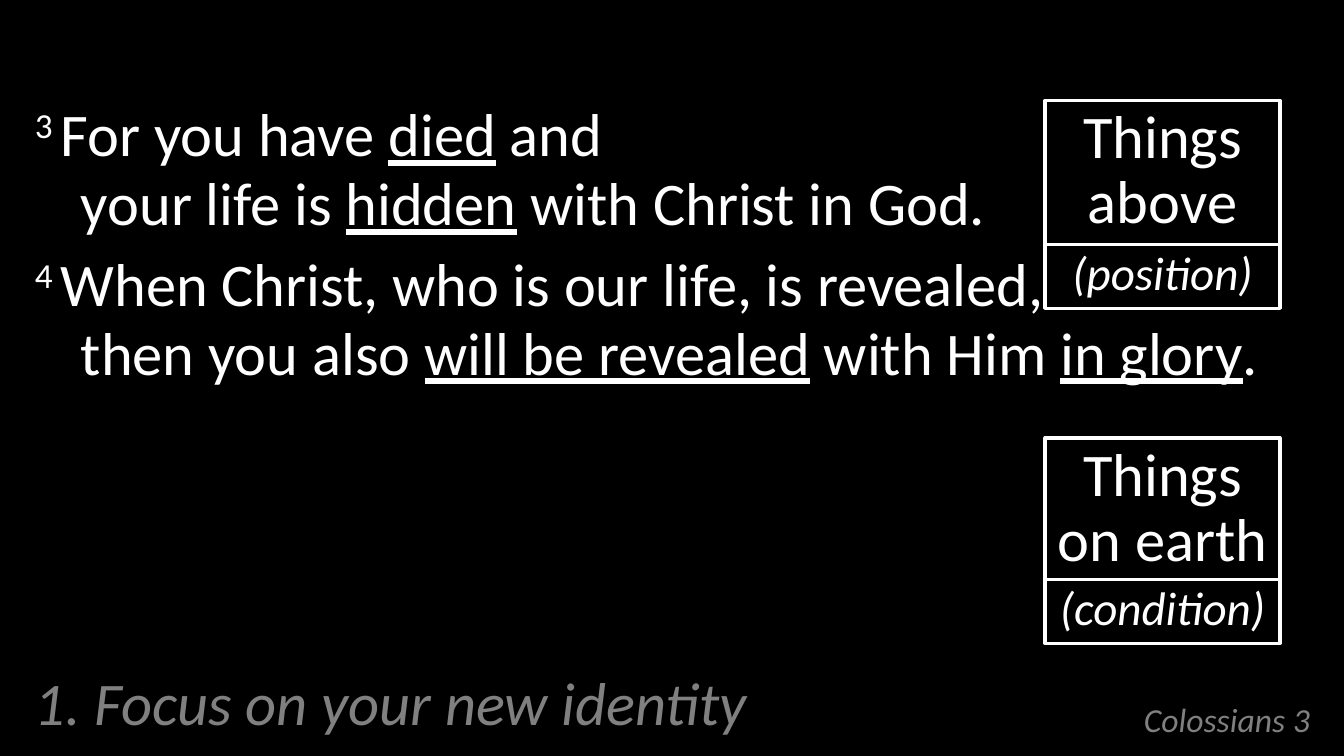
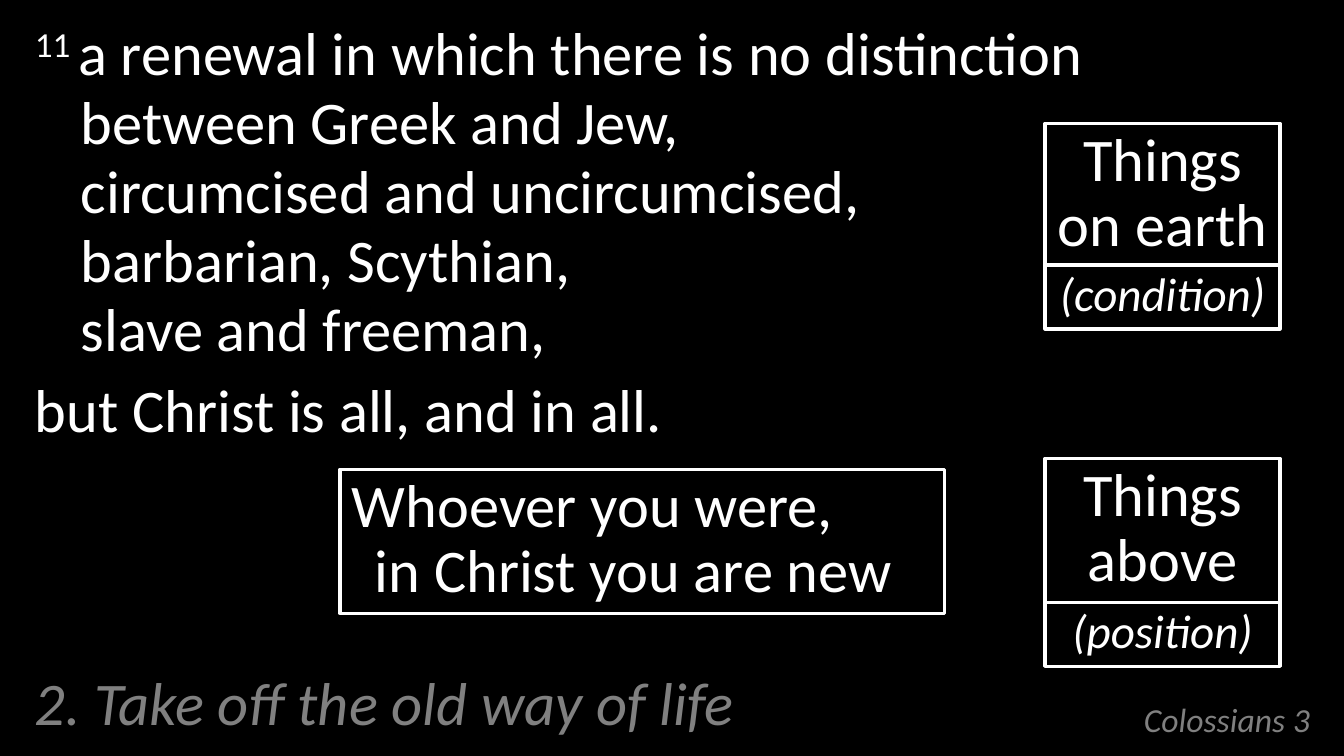
from pptx import Presentation
from pptx.dml.color import RGBColor
from pptx.enum.shapes import MSO_SHAPE
from pptx.enum.text import MSO_ANCHOR, MSO_AUTO_SIZE, PP_ALIGN
from pptx.util import Inches, Pt

RECTANGLE = MSO_SHAPE.RECTANGLE
TOP, BOTTOM = MSO_ANCHOR.TOP, MSO_ANCHOR.BOTTOM
LEFT, CENTER, RIGHT = PP_ALIGN.LEFT, PP_ALIGN.CENTER, PP_ALIGN.RIGHT
FIXED, GROW = MSO_AUTO_SIZE.NONE, MSO_AUTO_SIZE.SHAPE_TO_FIT_TEXT

FONT = "Calibri"
BLACK, WHITE, GREY = "000000", "FFFFFF", "808080"
TITLE_BOX = (7.06, 5.56, 3.87, 0.6)
POINT_BOX = (0.19, 5.56, 8.12, 0.6)
VERSE_LEFT, VERSE_WIDTH, VERSE_BOTTOM = 0.19, 10.7, 5.41
REALM_LEFT, REALM_WIDTH = 8.64, 1.94
NAME_HEIGHT, NOTE_HEIGHT = 1.19, 0.53
ABOVE = ("Things above", "(position)", 1.19)
EARTH = ("Things on earth", "(condition)", 1.17)
PLAIN, NUMBER, UNDERLINE = "plain", "number", "underline"

SLIDES = [
    {
        "point": "1. Focus on your new identity",
        "verse_top": 0.79,
        "verses": [
            [("3 ", NUMBER), ("For you have ", PLAIN), ("died", UNDERLINE),
             (" and \nyour life is ", PLAIN), ("hidden", UNDERLINE),
             (" with Christ in God.", PLAIN)],
            [("4 ", NUMBER),
             ("When Christ, who is our life, is revealed, \nthen you also ", PLAIN),
             ("will be revealed", UNDERLINE), (" with Him ", PLAIN),
             ("in glory", UNDERLINE), (".", PLAIN)],
        ],
        "realms": [(ABOVE, 0.83), (EARTH, 3.62)],
    },
    {
        "point": "2. Take off the old way of life",
        "verse_top": 0.12,
        "verses": [
            [("11 ", NUMBER),
             ("a renewal in which there is no distinction between Greek and Jew, \n"
              "circumcised and uncircumcised, \nbarbarian, Scythian, \n"
              "slave and freeman,", PLAIN)],
            [("but Christ is all, and in all.", PLAIN)],
        ],
        "summary": ("Whoever you were, \nin Christ you are new", (2.81, 3.88, 5, 1.19)),
        "realms": [(EARTH, 1.02), (ABOVE, 3.79)],
    },
]


def colour(value):
    """Turn a hex string into a colour."""
    return RGBColor.from_string(value)


def inches(box):
    """Turn a box of numbers into lengths."""
    return [Inches(length) for length in box]


def prepare_frame(shape, anchor=TOP, auto_size=FIXED):
    """Set the wrapping and anchoring of a shape's text."""
    frame = shape.text_frame
    frame.word_wrap = True
    frame.auto_size = auto_size
    frame.vertical_anchor = anchor
    return frame


def add_span(para, text, style=PLAIN):
    """Add a styled span, breaking lines at each newline."""
    for index, line in enumerate(text.split("\n")):
        if index:
            para.add_line_break()
        span = para.add_run()
        span.text = line
        if style == NUMBER:
            span._r.get_or_add_rPr().set("baseline", "30000")
        elif style == UNDERLINE:
            span.font.underline = True


def format_para(para, size=36, ink=WHITE, italic=False, align=LEFT, spacing=0.95, hang=0):
    """Format a paragraph, with an optional hanging indent."""
    if hang:
        properties = para._p.get_or_add_pPr()
        properties.set("marL", str(Inches(hang)))
        properties.set("indent", str(-Inches(hang)))
    para.alignment = align
    para.line_spacing = spacing
    para.font.name = FONT
    para.font.size = Pt(size)
    para.font.italic = italic
    para.font.color.rgb = colour(ink)


def place_title(page, box):
    """Place the passage reference as the title."""
    title = page.shapes.title
    title.left, title.top, title.width, title.height = inches(box)
    para = prepare_frame(title, BOTTOM).paragraphs[0]
    add_span(para, "Colossians 3")
    format_para(para, 20, GREY, True, RIGHT, 0.8)


def add_point(page, box, text):
    """Add the sermon point at the foot of the page."""
    shape = page.shapes.add_textbox(*inches(box))
    para = prepare_frame(shape, BOTTOM).paragraphs[0]
    add_span(para, text)
    format_para(para, ink=GREY, italic=True, hang=0.38)


def add_verses(page, box, verses):
    """Add the verses, one paragraph each."""
    frame = prepare_frame(page.shapes.add_textbox(*inches(box)))
    for index, spans in enumerate(verses):
        para = frame.add_paragraph() if index else frame.paragraphs[0]
        for text, style in spans:
            add_span(para, text, style)
        format_para(para, hang=0.38)
        if index:
            para.space_before = Pt(7)


def add_panel(page, box, text, **style):
    """Add a white-framed black panel with text."""
    panel = page.shapes.add_shape(RECTANGLE, *inches(box))
    panel.shadow.inherit = False
    panel.fill.solid()
    panel.fill.fore_color.rgb = colour(BLACK)
    panel.line.color.rgb = colour(WHITE)
    panel.line.width = Pt(2)
    para = prepare_frame(panel, auto_size=GROW).paragraphs[0]
    add_span(para, text)
    format_para(para, spacing=0.9, **style)


def add_realm(page, realm, left, top, width):
    """Add a realm panel with its note below."""
    name, note, note_offset = realm
    add_panel(page, (left, top, width, NAME_HEIGHT), name, align=CENTER)
    add_panel(page, (left, top + note_offset, width, NOTE_HEIGHT), note,
              size=28, italic=True, align=CENTER)


def build_slide(deck, content):
    """Build one scripture slide."""
    page = deck.slides.add_slide(deck.slide_layouts[5])
    place_title(page, TITLE_BOX)
    top = content["verse_top"]
    add_verses(page, (VERSE_LEFT, top, VERSE_WIDTH, VERSE_BOTTOM - top), content["verses"])
    add_point(page, POINT_BOX, content["point"])
    if "summary" in content:
        text, box = content["summary"]
        add_panel(page, box, text, hang=0.19)
    for realm, realm_top in content["realms"]:
        add_realm(page, realm, REALM_LEFT, realm_top, REALM_WIDTH)


def main():
    """Build and save the deck."""
    deck = Presentation()
    deck.slide_width, deck.slide_height = inches((11.11, 6.25))
    backdrop = deck.slide_master.background.fill
    backdrop.solid()
    backdrop.fore_color.rgb = colour(BLACK)
    for content in SLIDES:
        build_slide(deck, content)
    deck.save("out.pptx")


if __name__ == "__main__":
    main()
